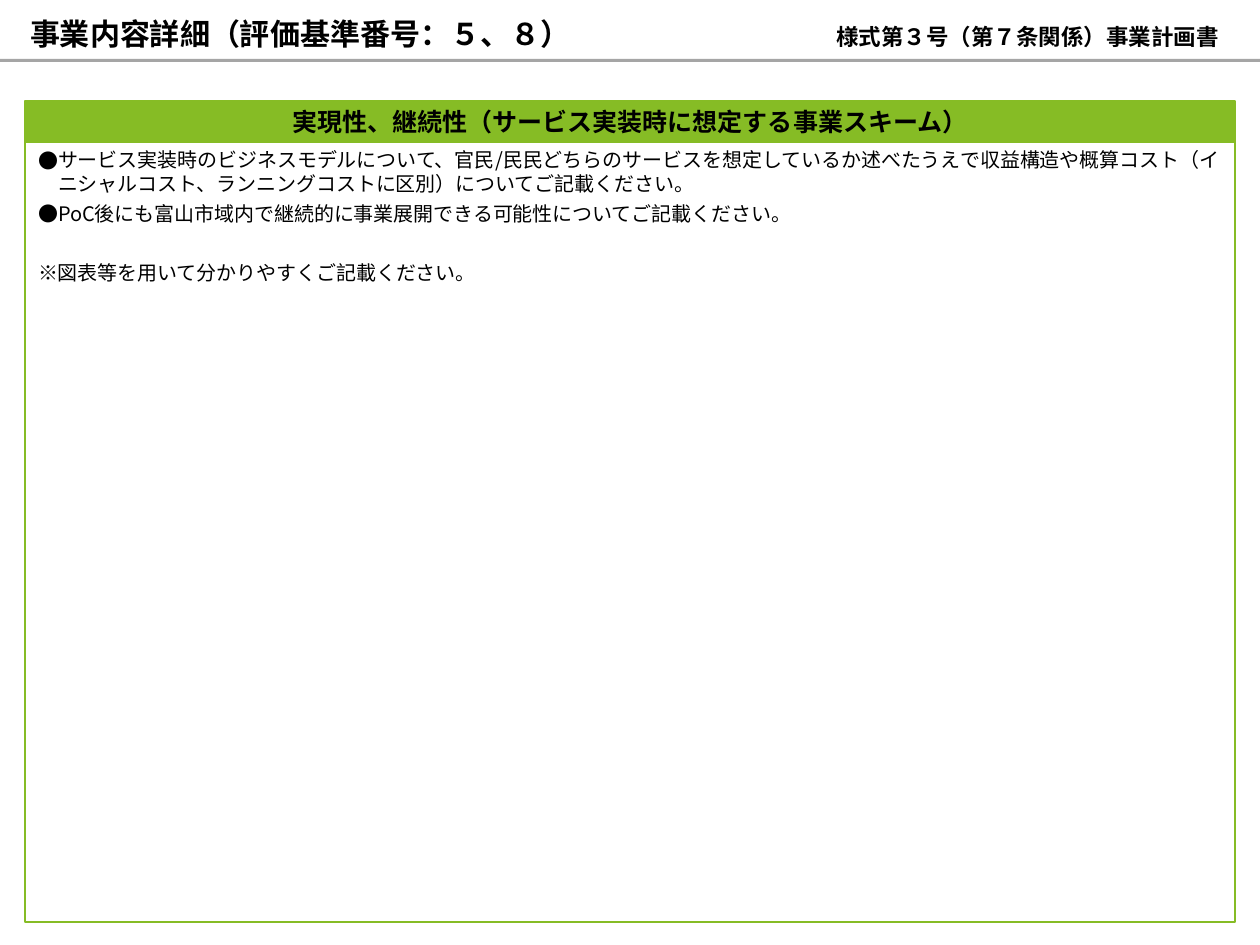
"""Build the business plan slide on feasibility and continuity."""
from dataclasses import dataclass

from lxml.etree import SubElement
from pptx import Presentation
from pptx.dml.color import RGBColor
from pptx.enum.shapes import MSO_SHAPE as Shape
from pptx.enum.text import MSO_ANCHOR as Anchor, MSO_AUTO_SIZE as AutoSize, PP_ALIGN as Align
from pptx.oxml.ns import qn
from pptx.util import Pt

PX = 10160


@dataclass(frozen=True)
class Theme:
    font: str = "Noto Sans CJK JP"
    ink: str = "000000"
    paper: str = "FFFFFF"
    green: str = "86BC25"
    rule: str = "A5A5A5"
    title: int = 24
    section: int = 20
    label: int = 18
    body: int = 16
    leading: float = 19.2
    gap: float = 4.3
    border: float = 1.5


@dataclass(frozen=True)
class Area:
    left: int
    top: int
    width: int
    height: int

    def emu(self):
        return [side * PX for side in (self.left, self.top, self.width, self.height)]


@dataclass(frozen=True)
class Item:
    text: str
    before: float = 0
    bullet: bool = False


THEME = Theme()
PAGE = Area(0, 0, 1260, 945)
TITLE = Area(30, 19, 618, 33)
LABEL = Area(820, 28, 415, 22)
RULE = Area(0, 59, PAGE.width, 3)
HEADING = Area(25, 101, 1210, 41)
BODY = Area(25, 142, 1210, 780)
INDENT = 20
ITEMS = [
    Item("サービス実装時のビジネスモデルについて、官民/民民どちらのサービスを想定しているか"
         "述べたうえで収益構造や概算コスト（イニシャルコスト、ランニングコストに区別）に"
         "ついてご記載ください。", bullet=True),
    Item("PoC後にも富山市域内で継続的に事業展開できる可能性についてご記載ください。",
         THEME.gap, bullet=True),
    Item("※図表等を用いて分かりやすくご記載ください。", 2 * THEME.gap + THEME.leading),
]


def add_span(para, text: str, size: int, bold: bool = False) -> None:
    span = para.add_run()
    span.text = text
    font = span.font
    font.name, font.size, font.bold = THEME.font, Pt(size), bold
    font.color.rgb = RGBColor.from_string(THEME.ink)
    SubElement(span._r.get_or_add_rPr(), qn("a:ea"), typeface=THEME.font)


def set_frame(box, anchor, across: int = 0, down: int = 0, wrap: bool = True):
    frame = box.text_frame
    frame.word_wrap, frame.auto_size = wrap, AutoSize.NONE
    frame.vertical_anchor = anchor
    frame.margin_left = frame.margin_right = across * PX
    frame.margin_top = frame.margin_bottom = down * PX
    return frame


def add_panel(page, area: Area, fill: str, border: str = ""):
    box = page.shapes.add_shape(Shape.RECTANGLE, *area.emu())
    box.shadow.inherit = False
    box.fill.solid()
    box.fill.fore_color.rgb = RGBColor.from_string(fill)
    if border:
        box.line.color.rgb = RGBColor.from_string(border)
        box.line.width = Pt(THEME.border)
    else:
        box.line.fill.background()
    return box


def write_line(frame, text: str, size: int, align) -> None:
    para = frame.paragraphs[0]
    para.alignment = align
    add_span(para, text, size, bold=True)


def write_items(frame, items: list[Item]) -> None:
    for index, item in enumerate(items):
        para = frame.add_paragraph() if index else frame.paragraphs[0]
        para.alignment = Align.LEFT
        para.line_spacing = Pt(THEME.leading)
        para.space_before = Pt(item.before)
        if item.bullet:
            properties = para._p.get_or_add_pPr()
            properties.set("marL", str(INDENT * PX))
            properties.set("indent", str(-INDENT * PX))
            SubElement(properties, qn("a:buFont"), typeface=THEME.font)
            SubElement(properties, qn("a:buChar"), char="●")
        add_span(para, item.text, THEME.body)


def main() -> None:
    deck = Presentation()
    deck.slide_width, deck.slide_height = PAGE.width * PX, PAGE.height * PX
    page = deck.slides.add_slide(deck.slide_layouts[5])

    title = page.shapes.title
    title.left, title.top, title.width, title.height = TITLE.emu()
    write_line(set_frame(title, Anchor.BOTTOM), "事業内容詳細（評価基準番号：５、８）",
               THEME.title, Align.LEFT)

    add_panel(page, RULE, THEME.rule)
    heading = add_panel(page, HEADING, THEME.green, THEME.green)
    write_line(set_frame(heading, Anchor.MIDDLE, 13, 6, wrap=False),
               "実現性、継続性（サービス実装時に想定する事業スキーム）",
               THEME.section, Align.CENTER)
    body = add_panel(page, BODY, THEME.paper, THEME.green)
    write_items(set_frame(body, Anchor.TOP, 13, 6), ITEMS)

    label = page.shapes.add_textbox(*LABEL.emu())
    write_line(set_frame(label, Anchor.BOTTOM), "様式第３号（第７条関係）事業計画書",
               THEME.label, Align.CENTER)
    deck.save("out.pptx")


if __name__ == "__main__":
    main()
